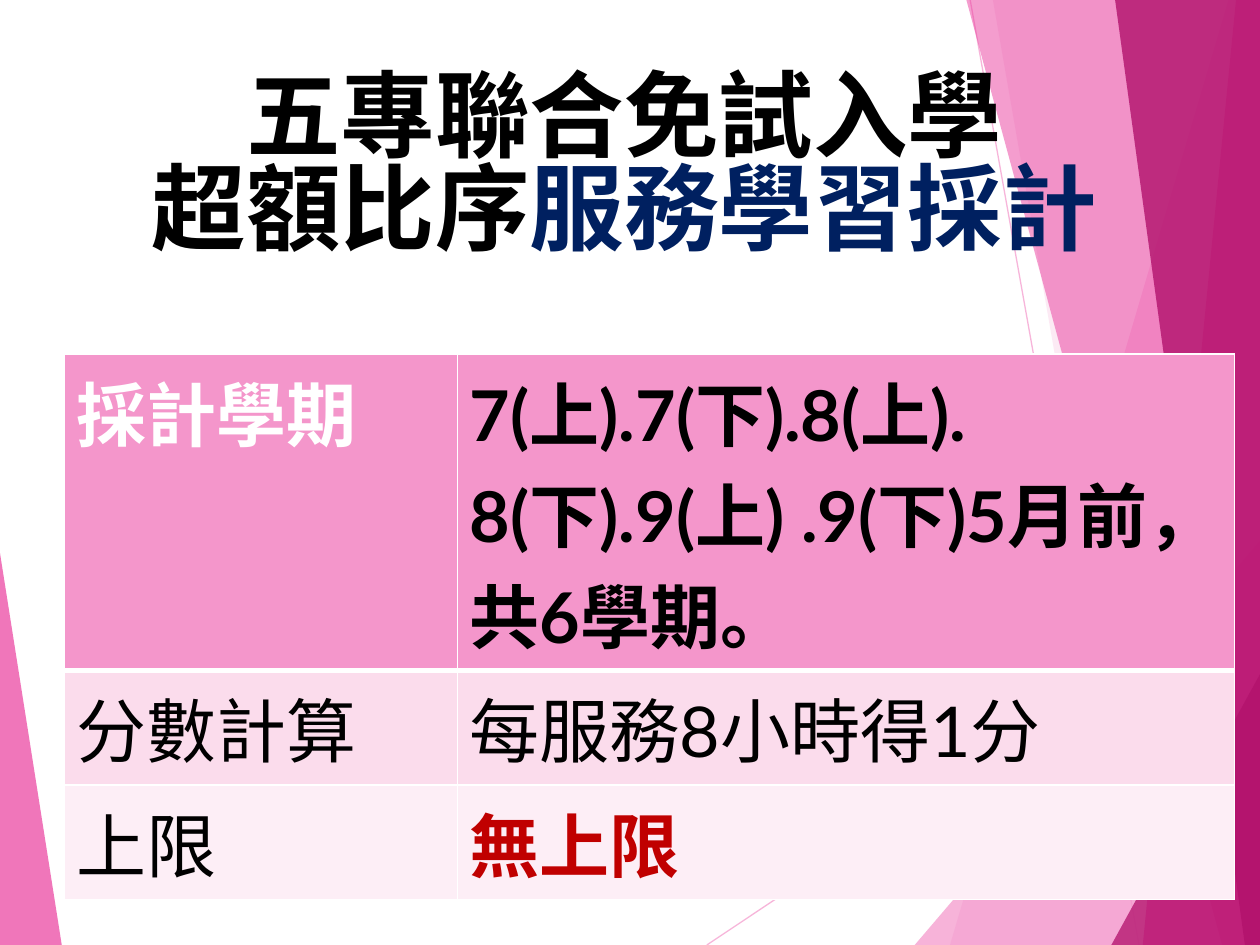
"""Build the slide on how service learning is scored for college admission."""
from lxml.etree import SubElement
from pptx import Presentation
from pptx.dml.color import RGBColor
from pptx.enum.shapes import MSO_CONNECTOR
from pptx.enum.text import MSO_ANCHOR, MSO_AUTO_SIZE, PP_ALIGN
from pptx.oxml.ns import qn
from pptx.util import Inches, Pt

THEME = dict(font="Lato", head=54, body=40, black="000000", white="FFFFFF",
             navy="002060", red="C00000", pink="F496CB", rose="EA3C9E",
             plum="B2126C", pale="FBDCEC", faint="FDEEF6")

TITLE = [("五專聯合免試入學\n超額比序", "black"), ("服務學習採計", "navy")]
COLS = [3.12, 6.17]
ROWS = [
    (2.5, "pink", [("採計學期", "white", True),
                   ("7(上).7(下).8(上). 8(下).9(上) .9(下)5月前，共6學期。", "black", True)]),
    (0.91, "pale", [("分數計算", "black", False), ("每服務8小時得1分", "black", False)]),
    (0.91, "faint", [("上限", "black", False), ("無上限", "red", True)]),
]
RAYS = [((5.61, 7.5), (10, 4.57)), ((7.7, 0), (9.04, 7.5))]
SHARDS = [
    ("pink", 36, [(9.75, 0), (7.54, 7.5), (10, 7.5), (10, 0)]),
    ("pink", 20, [(7.88, 0), (9.19, 7.5), (10, 7.5), (10, 0)]),
    ("pink", 72, [(7.26, 7.5), (10, 4.29), (10, 7.5)]),
    ("rose", 50, [(7.67, 0), (9.7, 7.5), (10, 7.5), (10, 0)]),
    ("rose", 66, [(9.81, 0), (9.07, 7.5), (10, 7.5), (10, 0)]),
    ("plum", 80, [(8.85, 0), (9.88, 7.5), (10, 7.5), (10, 0)]),
    ("plum", 76, [(8.82, 7.5), (10, 5.35), (10, 7.5)]),
    ("rose", 70, [(0, 4.39), (0.49, 7.5), (0, 7.5)]),
]


def color(name):
    return RGBColor.from_string(THEME[name])


def fade(props, alpha):
    tone = next(props.iter(qn("a:srgbClr")))
    SubElement(tone, qn("a:alpha"), val=str(alpha * 1000))


def style(run, size, tint, bold):
    font = run.font
    font.name, font.size, font.bold = THEME["font"], Pt(THEME[size]), bold
    font.color.rgb = color(tint)


def add_rays(shapes):
    for start, end in RAYS:
        ray = shapes.add_connector(MSO_CONNECTOR.STRAIGHT, *map(Inches, start + end))
        ray.line.color.rgb = color("pink")
        ray.line.width = Pt(0.75)
        props = ray._element.spPr
        fade(props, 70)
        SubElement(props, qn("a:effectLst"))


def add_shards(shapes):
    for tint, alpha, points in SHARDS:
        first, *rest = [tuple(map(Inches, point)) for point in points]
        pen = shapes.build_freeform(*first)
        pen.add_line_segments(rest, close=True)
        shard = pen.convert_to_shape()
        shard.shadow.inherit = False
        shard.fill.solid()
        shard.fill.fore_color.rgb = color(tint)
        fade(shard._element.spPr, alpha)
        shard.line.fill.background()


def set_title(title):
    title.left, title.top, title.width, title.height = map(Inches, (0.27, 0.44, 9.37, 1.81))
    frame = title.text_frame
    frame.auto_size = MSO_AUTO_SIZE.NONE
    frame.vertical_anchor = MSO_ANCHOR.MIDDLE
    para = frame.paragraphs[0]
    para.alignment = PP_ALIGN.CENTER
    para.line_spacing = 0.82
    (lead, _), (tail, tint) = TITLE
    para.text = lead
    for run in para.runs:
        style(run, "head", "black", True)
    run = para.add_run()
    run.text = tail
    style(run, "head", tint, True)


def add_edges(cell, base):
    props = cell._tc.get_or_add_tcPr()
    for spot, (side, width) in enumerate(dict(lnL=1, lnR=1, lnT=1, lnB=base).items()):
        edge = SubElement(props, qn("a:" + side), w=str(Pt(width)))
        fill = SubElement(edge, qn("a:solidFill"))
        SubElement(fill, qn("a:srgbClr"), val=THEME["white"])
        props.insert(spot, edge)


def add_grid(shapes):
    high = sum(row[0] for row in ROWS)
    grid = shapes.add_table(len(ROWS), len(COLS), *map(Inches, (0.51, 2.81, sum(COLS), high))).table
    for col, width in zip(grid.columns, COLS):
        col.width = Inches(width)
    for i, (height, back, texts) in enumerate(ROWS):
        grid.rows[i].height = Inches(height)
        for j, (text, tint, bold) in enumerate(texts):
            cell = grid.cell(i, j)
            cell.fill.solid()
            cell.fill.fore_color.rgb = color(back)
            add_edges(cell, 1 if i else 3)
            para = cell.text_frame.paragraphs[0]
            para.text = text
            style(para.runs[0], "body", tint, bold)


def main():
    deck = Presentation()
    deck.slide_width, deck.slide_height = Inches(10), Inches(7.5)
    slide = deck.slides.add_slide(deck.slide_layouts[5])
    shapes = slide.shapes
    title = shapes.title
    add_rays(shapes)
    add_shards(shapes)
    shapes._spTree.append(title._element)
    set_title(title)
    add_grid(shapes)
    deck.save("out.pptx")


if __name__ == "__main__":
    main()
